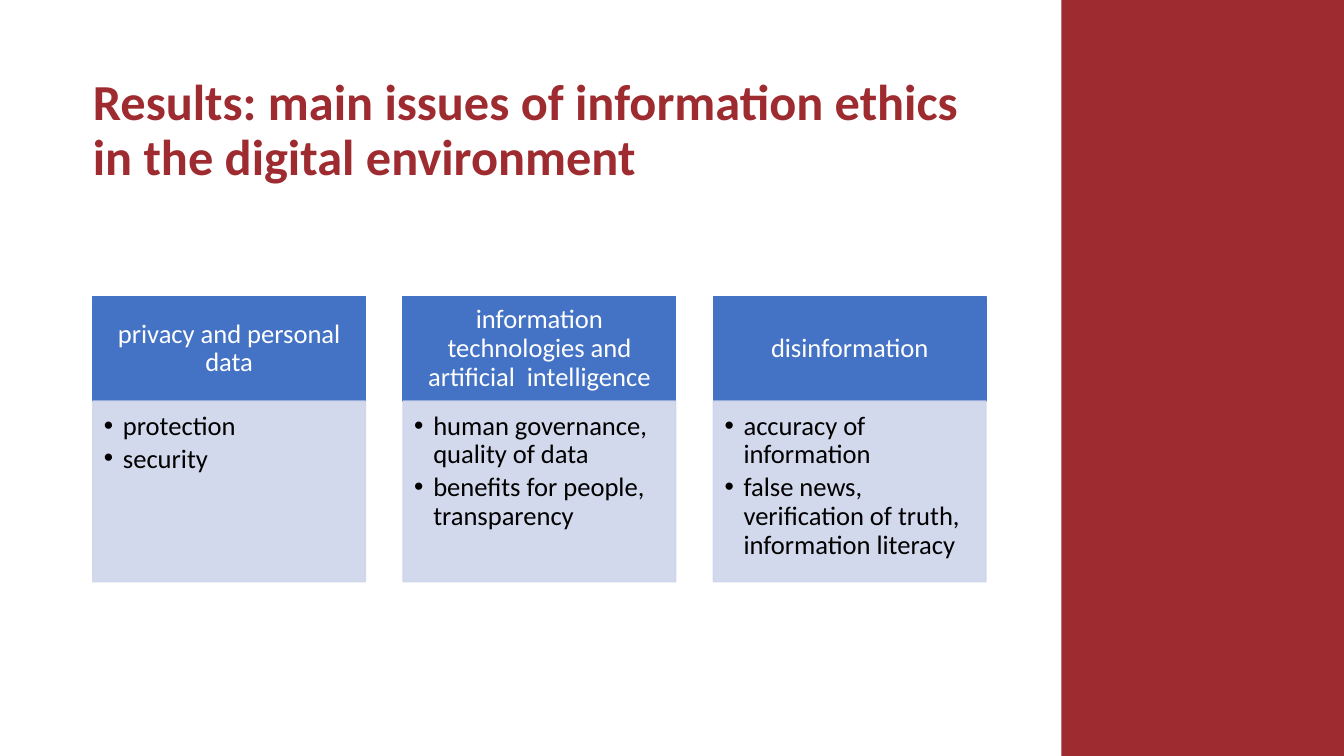
from lxml import etree
from pptx import Presentation
from pptx.dml.color import RGBColor
from pptx.enum.shapes import MSO_SHAPE
from pptx.enum.text import MSO_ANCHOR, PP_ALIGN
from pptx.oxml.ns import qn
from pptx.util import Cm, Pt

RECTANGLE = MSO_SHAPE.RECTANGLE
TOP, MIDDLE = MSO_ANCHOR.TOP, MSO_ANCHOR.MIDDLE
LEFT, CENTER = PP_ALIGN.LEFT, PP_ALIGN.CENTER

TITLE = "Results: main issues of information ethics in the digital environment"
ISSUES = [
    ("privacy and personal data", ["protection", "security"]),
    ("information technologies and artificial  intelligence",
     ["human governance, quality of data", "benefits for people, transparency"]),
    ("disinformation",
     ["accuracy of information",
      "false news, verification of truth, information literacy"]),
]

RED = RGBColor(0x9E, 0x2B, 0x2F)
BLUE = RGBColor(0x44, 0x72, 0xC4)
PALE_BLUE = RGBColor(0xCF, 0xD5, 0xEA)
WHITE = RGBColor(0xFF, 0xFF, 0xFF)
BLACK = RGBColor(0x00, 0x00, 0x00)

SLIDE_WIDTH, SLIDE_HEIGHT = 33.87, 19.05
BAND_LEFT = 26.75
MARGIN = 2.34
ISSUE_WIDTH, ISSUE_STEP = 6.87, 7.82
HEADING_TOP, HEADING_HEIGHT = 7.47, 2.64
DETAIL_TOP, DETAIL_HEIGHT = HEADING_TOP + HEADING_HEIGHT, 4.55
BULLET_INDENT = 0.48

TITLE_FORMAT = {
    "insets": (0, 0.13, 0.25, 0.13), "anchor": MIDDLE,
    "paragraph": {"alignment": LEFT, "line_spacing": 0.9},
    "font": {"name": "Calibri", "size": Pt(36), "bold": True}, "color": RED,
}
HEADING_FORMAT = {
    "insets": (0.38, 0.2, 0.38, 0.2), "anchor": MIDDLE,
    "paragraph": {"alignment": CENTER, "line_spacing": 0.9, "space_after": Pt(6.65)},
    "font": {"name": "Calibri", "size": Pt(19)}, "color": WHITE,
}
DETAIL_FORMAT = {
    "insets": (0.28, 0.28, 0.38, 0.43), "anchor": TOP, "bullet": "•",
    "paragraph": {"alignment": LEFT, "level": 1, "line_spacing": 0.9,
                  "space_after": Pt(2.85)},
    "font": {"name": "Calibri", "size": Pt(19)}, "color": BLACK,
}


def set_attributes(target, values):
    for attribute, value in values.items():
        setattr(target, attribute, value)


def add_bullet(paragraph, bullet):
    properties = paragraph._p.get_or_add_pPr()
    properties.set("marL", str(Cm(BULLET_INDENT)))
    properties.set("indent", str(-Cm(BULLET_INDENT)))
    etree.SubElement(properties, qn("a:buFont")).set("typeface", "Arial")
    etree.SubElement(properties, qn("a:buChar")).set("char", bullet)


def write(frame, lines, style):
    left, top, right, bottom = map(Cm, style["insets"])
    set_attributes(frame, {
        "word_wrap": True, "vertical_anchor": style["anchor"],
        "margin_left": left, "margin_top": top,
        "margin_right": right, "margin_bottom": bottom,
    })
    for index, line in enumerate(lines):
        paragraph = frame.add_paragraph() if index else frame.paragraphs[0]
        if "bullet" in style:
            add_bullet(paragraph, style["bullet"])
        set_attributes(paragraph, style["paragraph"])
        run = paragraph.add_run()
        run.text = line
        set_attributes(run.font, style["font"])
        run.font.color.rgb = style["color"]


def add_block(slide, box, color, outlined=True, opacity=100):
    block = slide.shapes.add_shape(RECTANGLE, *map(Cm, box))
    block.shadow.inherit = False
    block.fill.solid()
    block.fill.fore_color.rgb = color
    if outlined:
        block.line.color.rgb = color
        block.line.width = Pt(1)
    else:
        block.line.fill.background()
    if opacity < 100:
        for shade in block._element.spPr.iter(qn("a:srgbClr")):
            etree.SubElement(shade, qn("a:alpha")).set("val", str(opacity * 1000))
    return block


def main():
    deck = Presentation()
    deck.slide_width, deck.slide_height = Cm(SLIDE_WIDTH), Cm(SLIDE_HEIGHT)
    slide = deck.slides.add_slide(deck.slide_layouts[6])

    add_block(slide, (BAND_LEFT, 0, SLIDE_WIDTH - BAND_LEFT, SLIDE_HEIGHT),
              RED, outlined=False)
    title = slide.shapes.add_textbox(Cm(MARGIN), Cm(1.96), Cm(22.56), Cm(2.72))
    write(title.text_frame, [TITLE], TITLE_FORMAT)

    for column, (issue, details) in enumerate(ISSUES):
        left = MARGIN + column * ISSUE_STEP
        heading = add_block(
            slide, (left, HEADING_TOP, ISSUE_WIDTH, HEADING_HEIGHT), BLUE)
        write(heading.text_frame, [issue], HEADING_FORMAT)
        detail = add_block(
            slide, (left, DETAIL_TOP, ISSUE_WIDTH, DETAIL_HEIGHT), PALE_BLUE, opacity=90)
        write(detail.text_frame, details, DETAIL_FORMAT)

    deck.save("out.pptx")


if __name__ == "__main__":
    main()
